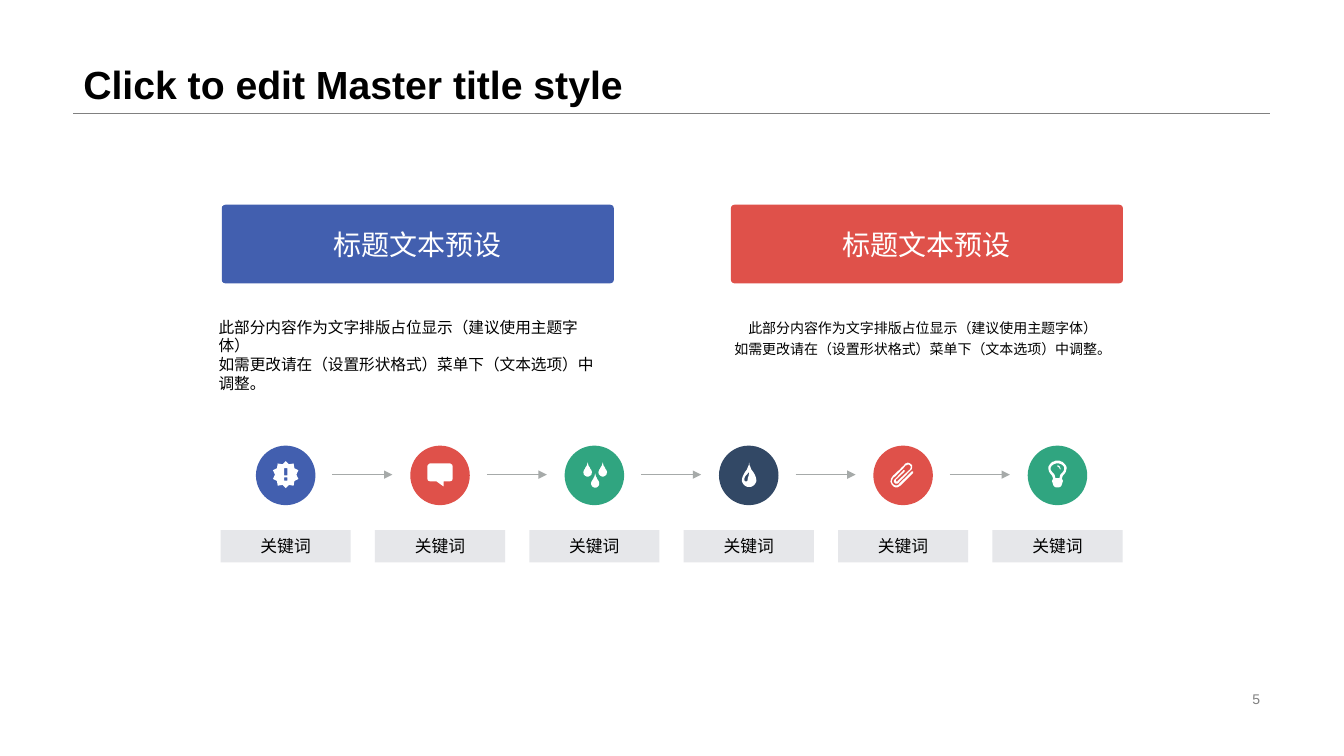
from math import cos, pi, sin

from lxml.etree import SubElement
from pptx import Presentation
from pptx.dml.color import RGBColor
from pptx.enum.shapes import MSO_CONNECTOR, MSO_SHAPE as Preset
from pptx.enum.text import MSO_ANCHOR as Anchor, MSO_AUTO_SIZE, PP_ALIGN as Align
from pptx.oxml.ns import qn
from pptx.util import Cm, Pt

FONT = "Arial"
BLUE, RED, GREEN, NAVY = "425FAF", "DF514A", "30A580", "324865"
WHITE, BLACK, GRAY, PALE, SILVER = "FFFFFF", "000000", "808080", "E6E7EA", "A6AAA9"
BODY = "此部分内容作为文字排版占位显示（建议使用主题字体）\n如需更改请在（设置形状格式）菜单下（文本选项）中调整。"
STEP_LEFT, STEP_WIDTH, STEP_PITCH = 5.56, 3.28, 3.89
CIRCLE_MIDDLE, CIRCLE_SIZE = 11.98, 1.5


def rgb(value):
    return RGBColor.from_string(value)


def write(shape, text, size, color, align=Align.LEFT, anchor=Anchor.MIDDLE,
          inset=0.0, wrap=True, spacing=1.0, bold=False):
    frame = shape.text_frame
    frame.auto_size = MSO_AUTO_SIZE.NONE
    frame.word_wrap = wrap
    frame.vertical_anchor = anchor
    frame.margin_left = frame.margin_right = Cm(inset)
    frame.margin_top = frame.margin_bottom = Cm(min(inset, 0.13))
    para = frame.paragraphs[0]
    para.text = text
    para.alignment = align
    para.line_spacing = spacing
    font = para.font
    font.name, font.size, font.bold = FONT, Pt(size), bold
    font.color.rgb = rgb(color)


def paint(shape, color):
    shape.shadow.inherit = False
    shape.fill.solid()
    shape.fill.fore_color.rgb = rgb(color)
    shape.line.fill.background()


def add_panel(page, preset, bounds, color):
    panel = page.shapes.add_shape(preset, *map(Cm, bounds))
    paint(panel, color)
    return panel


def add_label(page, bounds, text, **style):
    write(page.shapes.add_textbox(*map(Cm, bounds)), text, **style)


def add_line(page, left, right, y, color, arrow=False):
    line = page.shapes.add_connector(
        MSO_CONNECTOR.STRAIGHT, Cm(left), Cm(y), Cm(right), Cm(y))
    line.line.color.rgb = rgb(color)
    line.line.width = Pt(0.25)
    if arrow:
        SubElement(line.line._get_or_add_ln(), qn("a:tailEnd"), type="triangle")
    SubElement(line._element.spPr, qn("a:effectLst"))


def flatten(contour, steps=8):
    points = [contour[0]]
    for segment in contour[1:]:
        if len(segment) == 2:
            points.append(segment)
            continue
        knots = [points[-1], segment[:2], segment[2:4], segment[4:]]
        for step in range(1, steps + 1):
            t = step / steps
            weights = ((1 - t) ** 3, 3 * t * (1 - t) ** 2, 3 * t * t * (1 - t), t ** 3)
            points.append(tuple(
                sum(w * knot[axis] for w, knot in zip(weights, knots)) for axis in (0, 1)))
    return points


def add_icon(page, center, contours):
    outlines = [flatten(contour) for contour in contours]
    builder = page.shapes.build_freeform(*outlines[0][0], scale=Cm(0.01))
    for index, points in enumerate(outlines):
        if index:
            builder.move_to(*points[0])
        builder.add_line_segments(points[1:], close=True)
    paint(builder.convert_to_shape(Cm(center), Cm(CIRCLE_MIDDLE)), WHITE)


def block(top, bottom):
    return [(-4, top), (4, top), (4, bottom), (-4, bottom)]


def burst(tips=10, outer=34, inner=27):
    contour = []
    for index in range(2 * tips):
        radius, angle = (inner if index % 2 else outer), index * pi / tips
        contour.append((radius * sin(angle), -2 - radius * cos(angle)))
    return [contour, block(-18, 0), block(5, 13)]


def drop(x, top, width, height):
    half, bottom = width / 2, top + height
    widest = bottom - half
    return [
        (x, top),
        (x + half * 0.1, top + height * 0.35, x + half, top + height * 0.45, x + half, widest),
        (x + half, bottom - half * 0.45, x + half * 0.55, bottom, x, bottom),
        (x - half * 0.55, bottom, x - half, bottom - half * 0.45, x - half, widest),
        (x - half, top + height * 0.45, x - half * 0.1, top + height * 0.35, x, top),
    ]


BUBBLE = [[
    (-24, -30), (24, -30), (29, -30, 32, -26, 32, -21), (32, 7),
    (32, 12, 29, 15, 24, 15), (9, 15), (9, 28), (-9, 15), (-24, 15),
    (-29, 15, -32, 12, -32, 7), (-32, -21), (-32, -26, -29, -30, -24, -30),
]]
RAIN = [drop(2, -5, 20, 36), drop(-17, -33, 21, 36), drop(21, -33, 21, 36)]
WATER = [drop(1, -33, 36, 62), [
    (1, -8), (1, 0, -3, 6, -3, 11), (-3, 14, -5, 15, -8, 15),
    (-10, 15, -11, 13, -11, 10), (-11, 3, -5, -1, -2, -6),
]]
CLIP = [[
    (-17, 30), (-22, 30, -24, 28, -27, 25), (-32, 20, -34, 10, -27, 3),
    (-22, -3, -4, -18, 4, -28), (6, -30, 11, -33, 14, -31),
    (19, -30, 22, -28, 23, -23), (24, -20, 22, -15, 19, -13), (-11, 18),
    (-13, 20, -14, 21, -17, 21), (-19, 21, -20, 20, -22, 18),
    (-24, 15, -24, 13, -19, 8), (1, -13), (4, -13), (4, -10), (-17, 10),
    (-19, 13, -19, 15, -17, 15), (-16, 16, -14, 15, -13, 13), (17, -15),
    (19, -18, 20, -20, 19, -23), (18, -25, 17, -26, 14, -27),
    (11, -28, 9, -25, 6, -25), (-2, -15, -19, 3, -24, 5),
    (-29, 13, -29, 18, -24, 23), (-22, 25, -14, 28, -9, 20), (22, -10),
    (25, -11, 27, -8, 24, -5), (-6, 25), (-9, 28, -14, 30, -17, 30),
]]
BULB = [
    [(0, -37), (13, -37, 23, -28, 23, -17), (23, -4, 11, -2, 11, 8),
     (14, 14), (11, 23), (9, 33, -9, 33, -11, 23), (-14, 14), (-11, 8),
     (-11, -2, -23, -4, -23, -17), (-23, -28, -13, -37, 0, -37)],
    [(0, -30), (10, -30, 17, -25, 17, -17), (17, -7, 6, -6, 5, 7), (-5, 7),
     (-6, -6, -17, -7, -17, -17), (-17, -25, -10, -30, 0, -30)],
    [(0, -25), (5, -25, 8, -20, 8, -15), (6, -15), (6, -19, 3, -22, 0, -22)],
]
STEPS = [(BLUE, burst()), (RED, BUBBLE), (GREEN, RAIN),
         (NAVY, WATER), (RED, CLIP), (GREEN, BULB)]


def add_title(page, text):
    title = page.shapes.title
    title.left, title.top, title.width, title.height = map(Cm, (1.85, 0, 30.15, 2.85))
    write(title, text, 28, BLACK, anchor=Anchor.BOTTOM, inset=0.25, spacing=0.9, bold=True)
    add_line(page, 1.85, 32.26 - 0.26, 2.85, GRAY)


def add_heading(page, left, color):
    heading = add_panel(page, Preset.ROUNDED_RECTANGLE, (left, 5.16, 9.88, 1.98), color)
    heading.adjustments[0] = 0.045
    write(heading, "标题文本预设", 20, WHITE, Align.CENTER, inset=0.08, wrap=False)


def add_step(page, index, color, icon):
    left = STEP_LEFT + index * STEP_PITCH
    center = left + STEP_WIDTH / 2
    half = CIRCLE_SIZE / 2
    add_panel(page, Preset.OVAL,
              (center - half, CIRCLE_MIDDLE - half, CIRCLE_SIZE, CIRCLE_SIZE), color)
    add_icon(page, center, icon)
    keyword = add_panel(page, Preset.RECTANGLE, (left, 13.36, STEP_WIDTH, 0.81), PALE)
    write(keyword, "关键词", 12, BLACK, Align.CENTER, inset=0.08, wrap=False)
    if index < len(STEPS) - 1:
        add_line(page, center + 1.18, center + 2.69, 11.96, SILVER, arrow=True)


def main():
    deck = Presentation()
    deck.slide_width, deck.slide_height = Cm(33.87), Cm(19.05)
    page = deck.slides.add_slide(deck.slide_layouts[5])
    add_title(page, "Click to edit Master title style")
    add_heading(page, 5.59, BLUE)
    add_heading(page, 18.42, RED)
    add_label(page, (5.51, 8, 9.73, 1.83), BODY, size=11.2, color=BLACK, anchor=Anchor.TOP)
    add_label(page, (18.31, 7.98, 9.88, 1.83), BODY, size=10, color=BLACK,
              align=Align.CENTER, anchor=Anchor.TOP, spacing=1.2)
    for index, (color, icon) in enumerate(STEPS):
        add_step(page, index, color, icon)
    add_label(page, (23.93, 17.32, 8.08, 0.58), "5", size=10, color=GRAY,
              align=Align.RIGHT, inset=0.25)
    deck.save("out.pptx")


if __name__ == "__main__":
    main()
